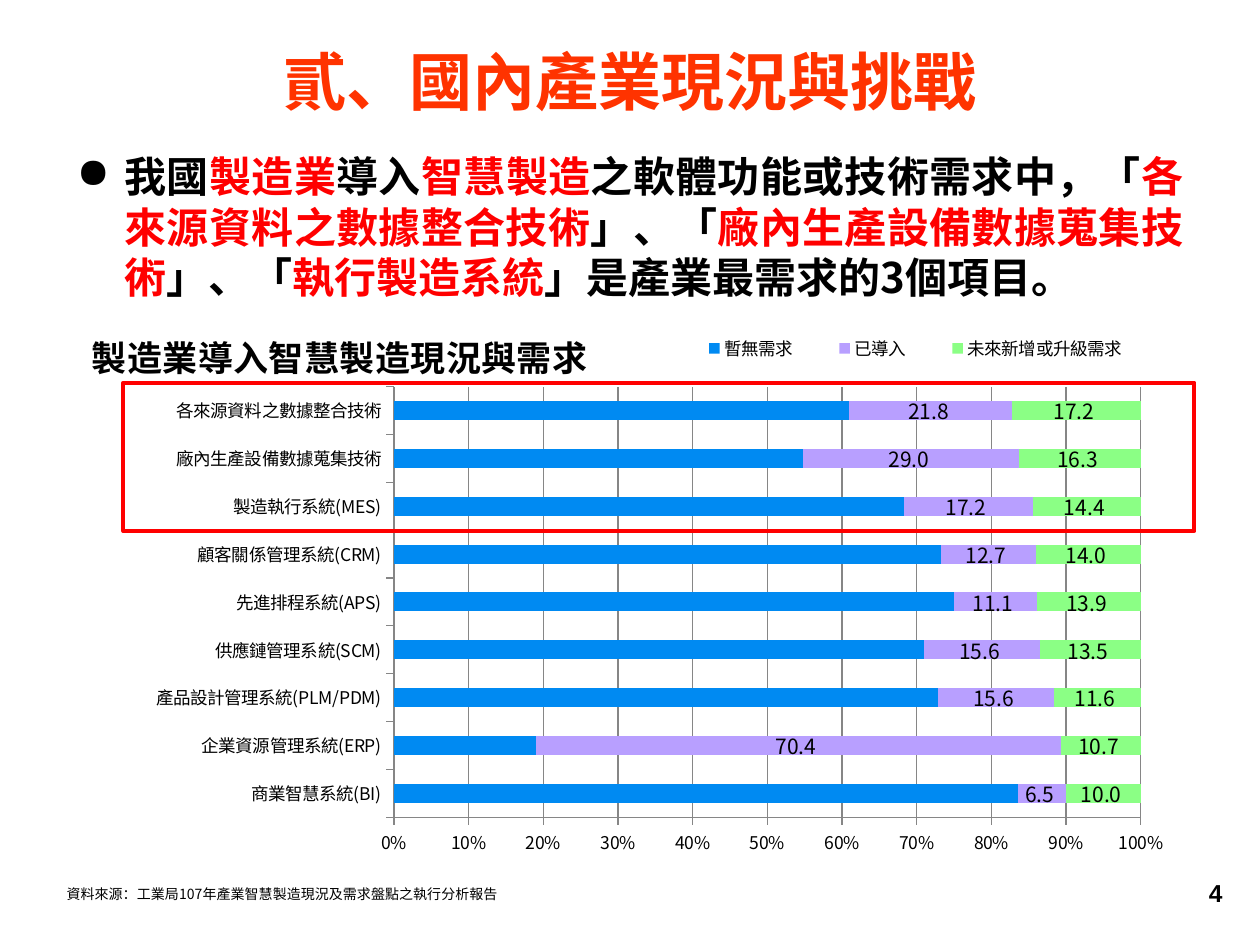
import pptx
import pptx.chart.data
import pptx.dml.color
import pptx.enum.chart
import pptx.enum.shapes
import pptx.enum.text
import pptx.oxml
import pptx.oxml.ns
import pptx.util
from dataclasses import dataclass
from lxml import etree


@dataclass(frozen=True)
class Theme:
    cjk: str = "Noto Sans CJK SC"
    latin: str = "Arial"
    ink: str = "000000"
    heading: str = "FF3300"
    accent: str = "FF0000"
    grid: str = "868686"
    series: tuple = ("008AF2", "B89FFF", "8BFF85")
    title_size: int = 36
    body_size: int = 24
    chart_title_size: int = 20
    page_size: int = 14
    value_size: int = 12
    axis_size: int = 10
    source_size: int = 8


def rgb(value):
    return pptx.dml.color.RGBColor.from_string(value)


class SlideBuilder:
    def __init__(self, deck, theme):
        self.deck, self.theme = deck, theme
        self.slide = deck.slides.add_slide(deck.slide_layouts[5])

    def place(self, left, top, width, height):
        across, down = self.deck.slide_width, self.deck.slide_height
        return int(left * across), int(top * down), int(width * across), int(height * down)

    def style(self, font, size, color, bold=False, face=None):
        face = face or self.theme.cjk
        font.size, font.bold = pptx.util.Pt(size), bold
        font.name = face
        font.color.rgb = rgb(color)
        properties = font._element
        east = etree.Element(pptx.oxml.ns.qn("a:ea"), typeface=face)
        properties.find(pptx.oxml.ns.qn("a:latin")).addnext(east)

    def add_runs(self, paragraph, runs, size, bold=False, face=None):
        for words, color in runs:
            run = paragraph.add_run()
            run.text = words
            self.style(run.font, size, color, bold, face)

    def title(self, words, area):
        heading = self.slide.shapes.title
        heading.left, heading.top, heading.width, heading.height = self.place(*area)
        frame = heading.text_frame
        frame.vertical_anchor = pptx.enum.text.MSO_ANCHOR.MIDDLE
        paragraph = frame.paragraphs[0]
        paragraph.alignment = pptx.enum.text.PP_ALIGN.CENTER
        self.add_runs(paragraph, [(words, self.theme.heading)], self.theme.title_size, True)

    def text(self, runs, area, size, align="LEFT", bold=False, face=None,
             anchor="TOP", spacing=None, bullet=None):
        frame = self.slide.shapes.add_textbox(*self.place(*area)).text_frame
        frame.word_wrap = True
        frame.vertical_anchor = pptx.enum.text.MSO_ANCHOR[anchor]
        paragraph = frame.paragraphs[0]
        paragraph.alignment = pptx.enum.text.PP_ALIGN[align]
        if spacing:
            paragraph.line_spacing = pptx.util.Pt(spacing)
        if bullet:
            properties = paragraph._p.get_or_add_pPr()
            indent = pptx.util.Inches(0.38)
            properties.set("marL", str(indent))
            properties.set("indent", str(-indent))
            etree.SubElement(properties, pptx.oxml.ns.qn("a:buChar"), char=bullet)
        self.add_runs(paragraph, runs, size, bold, face)

    def frame(self, area, color, weight):
        box = self.slide.shapes.add_shape(
            pptx.enum.shapes.MSO_SHAPE.RECTANGLE, *self.place(*area))
        box.shadow.inherit = False
        box.fill.background()
        box.line.color.rgb = rgb(color)
        box.line.width = pptx.util.Pt(weight)

    def layout(self, parent, left, top, width=None, height=None, inner=False):
        chart_tag = pptx.oxml.ns.qn
        for old in parent.findall(chart_tag("c:layout")):
            parent.remove(old)
        holder = etree.Element(chart_tag("c:layout"))
        manual = etree.SubElement(holder, chart_tag("c:manualLayout"))
        settings = [("layoutTarget", "inner")] if inner else []
        settings += [("xMode", "edge"), ("yMode", "edge"), ("x", left), ("y", top)]
        if width:
            settings += [("w", width), ("h", height)]
        for tag, value in settings:
            etree.SubElement(manual, chart_tag("c:" + tag), val=str(value))
        before = [child for child in parent
                  if child.tag in (chart_tag("c:tx"), chart_tag("c:legendPos"))]
        parent.insert(len(before), holder)

    def stacked_bars(self, heading, categories, series, area):
        theme = self.theme
        data = pptx.chart.data.CategoryChartData()
        data.categories = categories
        for name, values in series:
            data.add_series(name, values)
        chart = self.slide.shapes.add_chart(
            pptx.enum.chart.XL_CHART_TYPE.BAR_STACKED_100, *self.place(*area), data).chart
        self.style(chart.font, theme.axis_size, theme.ink)
        chart.has_title = True
        self.add_runs(chart.chart_title.text_frame.paragraphs[0],
                      [(heading, theme.ink)], theme.chart_title_size, True)
        chart.chart_title.include_in_layout = False
        self.layout(chart.chart_title._element, 0.01, 0.03)
        chart.has_legend = True
        chart.legend.position = pptx.enum.chart.XL_LEGEND_POSITION.RIGHT
        chart.legend.include_in_layout = False
        self.layout(chart.legend._element, 0.53, 0.05, 0.44, 0.06)
        plot = chart.plots[0]
        plot.gap_width, plot.overlap, plot.vary_by_categories = 150, 100, False
        self.layout(chart._chartSpace.chart.plotArea, 0.285, 0.148, 0.666, 0.763, True)
        for position, (bars, color) in enumerate(zip(plot.series, theme.series)):
            bars.format.fill.solid()
            bars.format.fill.fore_color.rgb = rgb(color)
            if position:
                labels = bars.data_labels
                labels.show_value = True
                labels.number_format, labels.number_format_is_linked = "0.0_ ", False
                labels.position = pptx.enum.chart.XL_LABEL_POSITION.CENTER
                self.style(labels.font, theme.value_size, theme.ink)
        scale = chart.value_axis
        scale.minimum_scale, scale.maximum_scale, scale.major_unit = 0, 1, 0.1
        scale.has_major_gridlines = True
        scale.tick_labels.number_format = "0%"
        scale.tick_labels.number_format_is_linked = False
        for axis in (scale, chart.category_axis):
            axis.major_tick_mark = pptx.enum.chart.XL_TICK_MARK.OUTSIDE
            axis.minor_tick_mark = pptx.enum.chart.XL_TICK_MARK.NONE
            axis.format.line.color.rgb = rgb(theme.grid)
        scale.major_gridlines.format.line.color.rgb = rgb(theme.grid)


def main():
    theme = Theme()
    deck = pptx.Presentation()
    deck.slide_width, deck.slide_height = pptx.util.Inches(10), pptx.util.Inches(7.5)
    page = SlideBuilder(deck, theme)
    page.title("貳、國內產業現況與挑戰", (0, 0.01, 1, 0.15))
    phrases = ["我國", "製造業", "導入", "智慧製造", "之軟體功能或技術需求中，「",
               "各來源資料之數據整合技術", "」、「", "廠內生產設備數據蒐集技術",
               "」、「", "執行製造系統", "」是產業最需求的3個項目。"]
    findings = [(words, theme.accent if place % 2 else theme.ink)
                for place, words in enumerate(phrases)]
    page.text(findings, (0.051, 0.153, 0.898, 0.175), theme.body_size,
              "JUSTIFY", True, spacing=28.8, bullet="●")
    page.text([("資料來源：工業局107年產業智慧製造現況及需求盤點之執行分析報告", theme.ink)],
              (0.043, 0.93, 0.365, 0.05), theme.source_size, spacing=10)
    systems = ["商業智慧系統(BI)", "企業資源管理系統(ERP)", "產品設計管理系統(PLM/PDM)",
               "供應鏈管理系統(SCM)", "先進排程系統(APS)", "顧客關係管理系統(CRM)",
               "製造執行系統(MES)", "廠內生產設備數據蒐集技術", "各來源資料之數據整合技術"]
    demand = [
        ("暫無需求", (84, 19, 73, 71, 75, 73, 68, 55, 61)),
        ("已導入", (6.5, 70.4, 15.6, 15.6, 11.1, 12.7, 17.2, 29, 21.8)),
        ("未來新增或升級需求", (10, 10.7, 11.6, 13.5, 13.9, 14, 14.4, 16.3, 17.2)),
    ]
    page.stacked_bars("製造業導入智慧製造現況與需求", systems, demand,
                      (0.059, 0.321, 0.89, 0.597))
    page.frame((0.098, 0.405, 0.85, 0.157), theme.accent, 2.25)
    page.text([("4", theme.ink)], (0.772, 0.911, 0.208, 0.067), theme.page_size,
              "RIGHT", True, theme.latin, "MIDDLE")
    deck.save("out.pptx")


if __name__ == "__main__":
    main()
